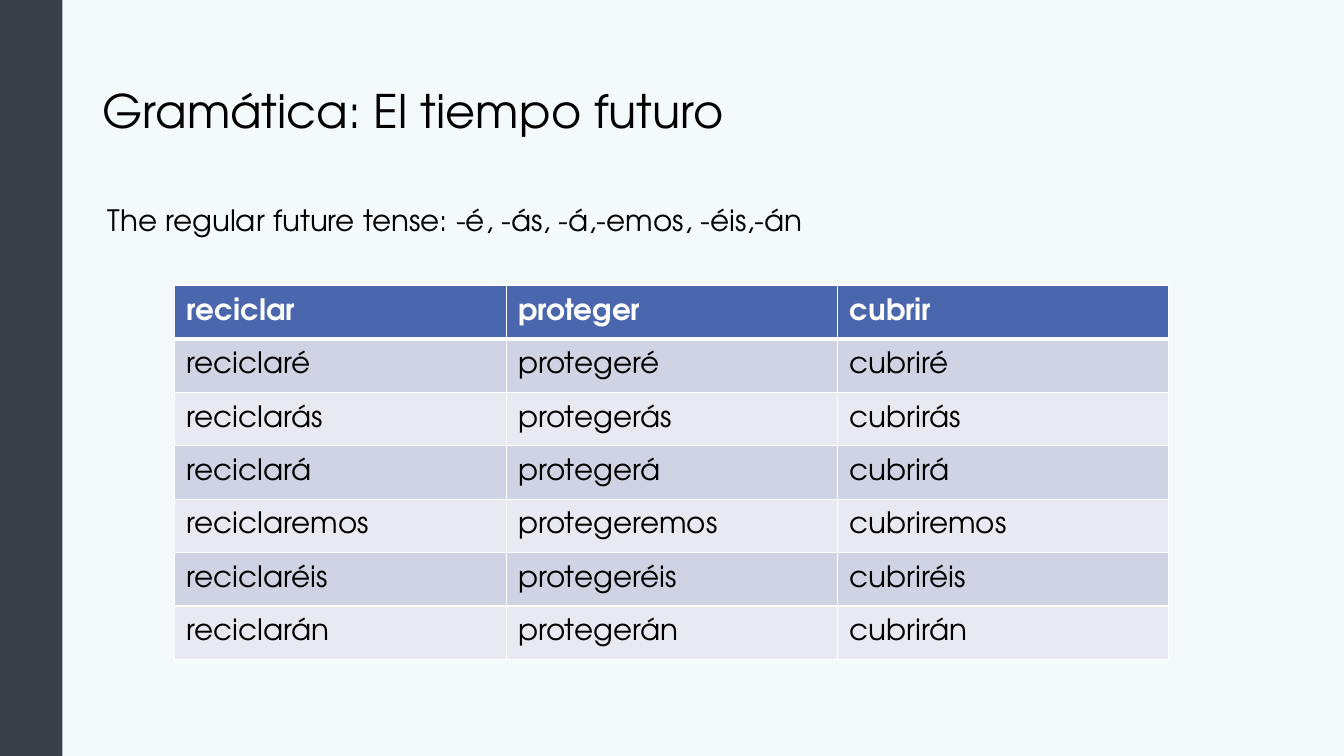
import dataclasses

import lxml.etree
import pptx
import pptx.dml.color
import pptx.enum.shapes
import pptx.enum.text
import pptx.oxml.ns
import pptx.slide
import pptx.table
import pptx.util

FONT = "TeX Gyre Adventor"
BLACK, WHITE = "000000", "FFFFFF"
HEADER, BANDS = "4A66AC", ("E9EAF1", "D0D3E3")
SLIDE_W, SLIDE_H = pptx.util.Inches(13.33), pptx.util.Inches(7.5)
ANCHOR = pptx.enum.text.MSO_ANCHOR

STEMS = ("reciclar", "proteger", "cubrir")
ENDINGS = ("", "é", "ás", "á", "emos", "éis", "án")


@dataclasses.dataclass
class Area:
    """A rectangle in percent of the slide's width and height."""
    left: float
    top: float
    width: float
    height: float

    def box(self) -> tuple[int, int, int, int]:
        return (x_share(self.left), y_share(self.top),
                x_share(self.width), y_share(self.height))


@dataclasses.dataclass
class TextBlock:
    text: str
    area: Area
    size: float
    anchor: ANCHOR
    space_before: float = 0
    margin: float = 0
    indent: float = 0


def x_share(percent: float) -> int:
    return round(SLIDE_W * percent / 100)


def y_share(percent: float) -> int:
    return round(SLIDE_H * percent / 100)


def paint(fill, colour: str) -> None:
    fill.solid()
    fill.fore_color.rgb = pptx.dml.color.RGBColor.from_string(colour)


def set_font(p, size: float, colour: str, bold: bool = False) -> None:
    p.font.name, p.font.size, p.font.bold = FONT, pptx.util.Pt(size), bold
    paint(p.font.fill, colour)


def add_text(s: pptx.slide.Slide, block: TextBlock) -> None:
    tf = s.shapes.add_textbox(*block.area.box()).text_frame
    tf.word_wrap, tf.vertical_anchor = True, block.anchor
    p = tf.paragraphs[0]
    p.text, p.line_spacing = block.text, 0.9
    p.space_before = pptx.util.Pt(block.space_before)
    ppr = p._p.get_or_add_pPr()
    ppr.set("marL", str(x_share(block.margin)))
    ppr.set("indent", str(x_share(block.indent)))
    set_font(p, block.size, BLACK)


def add_borders(cell: pptx.table._Cell, bottom: float, top: float) -> None:
    tcpr = cell._tc.get_or_add_tcPr()
    widths = {"lnL": 1, "lnR": 1, "lnT": top, "lnB": bottom}
    for i, (tag, width) in enumerate(widths.items()):
        ln = lxml.etree.Element(pptx.oxml.ns.qn(f"a:{tag}"), w=str(pptx.util.Pt(width)))
        fill = lxml.etree.SubElement(ln, pptx.oxml.ns.qn("a:solidFill"))
        lxml.etree.SubElement(fill, pptx.oxml.ns.qn("a:srgbClr"), val=WHITE)
        tcpr.insert(i, ln)


def style_cell(cell: pptx.table._Cell, row: int) -> None:
    is_header = row == 0
    cell.margin_left = cell.margin_right = pptx.util.Inches(0.12)
    cell.margin_top = cell.margin_bottom = pptx.util.Inches(0.09)
    cell.vertical_anchor = ANCHOR.MIDDLE
    paint(cell.fill, HEADER if is_header else BANDS[row % 2])
    set_font(cell.text_frame.paragraphs[0], 21, WHITE if is_header else BLACK, is_header)
    add_borders(cell, bottom=3 if is_header else 1, top=3 if row == 1 else 1)


def add_conjugations(s: pptx.slide.Slide, area: Area) -> None:
    frame = s.shapes.add_table(len(ENDINGS), len(STEMS), *area.box())
    for row, ending in enumerate(ENDINGS):
        for col, stem in enumerate(STEMS):
            cell = frame.table.cell(row, col)
            cell.text = stem + ending
            style_cell(cell, row)


def main() -> None:
    prs = pptx.Presentation()
    prs.slide_width, prs.slide_height = SLIDE_W, SLIDE_H
    s = prs.slides.add_slide(prs.slide_layouts[6])
    paint(s.background.fill, "F4F9FC")

    # Side bar
    sp = s.shapes.add_shape(pptx.enum.shapes.MSO_SHAPE.RECTANGLE,
                            *Area(0, 0, 4.65, 100).box())
    sp.shadow.inherit = False
    paint(sp.fill, "3A4047")
    sp.line.fill.background()

    # Title and rule
    for block in (
        TextBlock("Gramática: El tiempo futuro", Area(6.9, 5.33, 86.25, 19.33),
                  33, ANCHOR.MIDDLE),
        TextBlock("The regular future tense: -é, -ás, -á,-emos, -éis,-án",
                  Area(6.9, 26.67, 86.25, 63.47), 21, ANCHOR.TOP,
                  space_before=7.5, margin=2.85, indent=-2.48),
    ):
        add_text(s, block)

    # Conjugation table
    add_conjugations(s, Area(13, 37.77, 73.97, 6.11 * len(ENDINGS)))
    prs.save("out.pptx")


if __name__ == "__main__":
    main()
